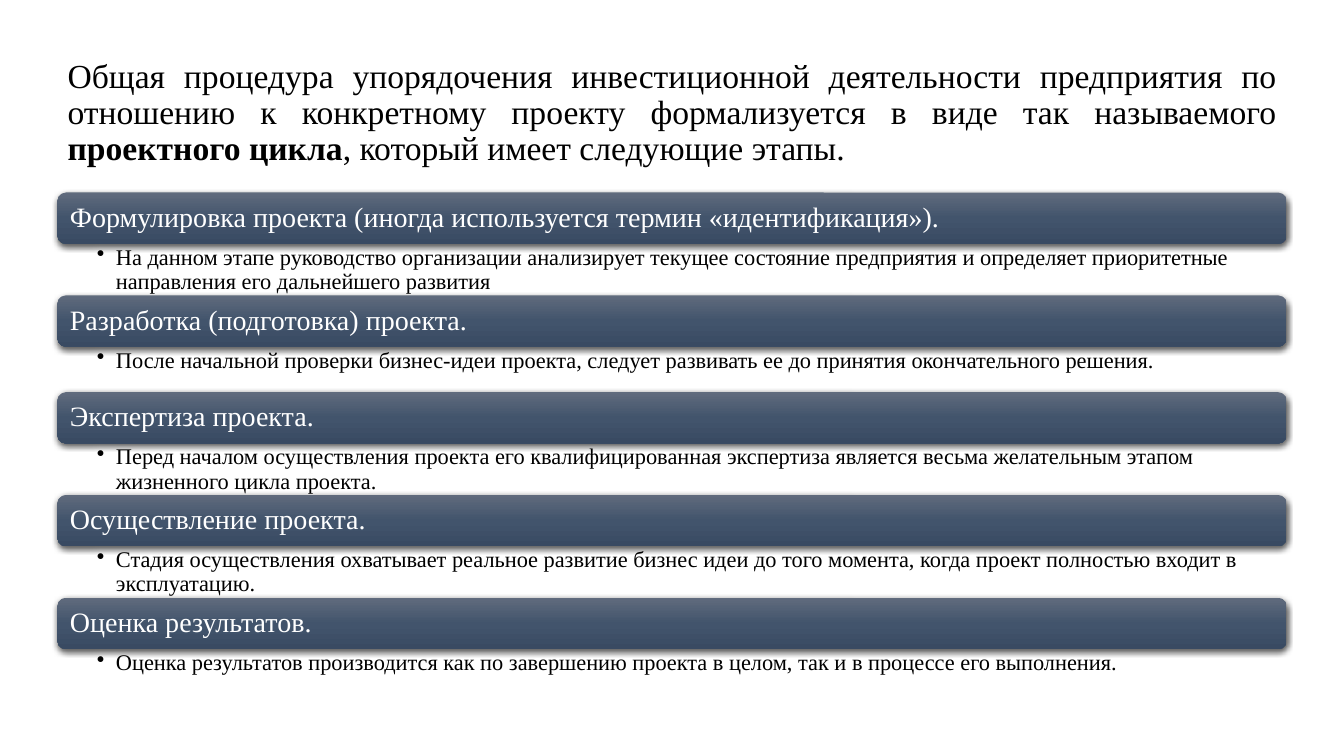
"""Build a slide on the five stages of the project cycle."""
import pptx
import pptx.util
import pptx.oxml
import pptx.oxml.ns
import pptx.dml.color
import pptx.enum.shapes
import pptx.enum.text

Inches = pptx.util.Inches
Pt = pptx.util.Pt
ANCHOR = pptx.enum.text.MSO_ANCHOR
ALIGN = pptx.enum.text.PP_ALIGN
NS = pptx.oxml.ns.nsdecls("a")
COLORS = {"text": "000000", "label": "FFFFFF", "top": "606B7D",
          "mid": "42546C", "base": "394A62", "shade": "000000"}
LEFT, WIDTH, BAR = 0.57, 12.19, 0.51

TITLE = [
    ("Общая процедура упорядочения инвестиционной деятельности предприятия по "
     "отношению к конкретному проекту формализуется в виде так называемого ", False),
    ("проектного цикла", True),
    (", который имеет следующие этапы.", False),
]
STAGES = [
    ("Формулировка проекта (иногда используется термин «идентификация»).",
     "На данном этапе руководство организации анализирует текущее состояние предприятия "
     "и определяет приоритетные направления его дальнейшего развития", 0.51),
    ("Разработка (подготовка) проекта.",
     "После начальной проверки бизнес-идеи проекта, следует развивать ее "
     "до принятия окончательного решения.", 0.45),
    ("Экспертиза проекта.",
     "Перед началом осуществления проекта его квалифицированная экспертиза является "
     "весьма желательным этапом жизненного цикла проекта.", 0.51),
    ("Осуществление проекта.",
     "Стадия осуществления охватывает реальное развитие бизнес идеи до того момента, "
     "когда проект полностью входит в эксплуатацию.", 0.51),
    ("Оценка результатов.",
     "Оценка результатов производится как по завершению проекта в целом, "
     "так и в процессе его выполнения.", 0.45),
]
GRAD = (f'<a:gradFill {NS} rotWithShape="1"><a:gsLst>'
        + "".join(f'<a:gs pos="{pos}"><a:srgbClr val="{COLORS[name]}"/></a:gs>'
                  for pos, name in ((0, "top"), (50000, "mid"), (100000, "base")))
        + '</a:gsLst><a:lin ang="5400000" scaled="0"/></a:gradFill>')
SHADE = (f'<a:outerShdw {NS} blurRad="{Pt(4.5)}" dist="{Pt(1.5)}" dir="5400000" '
         f'algn="ctr" rotWithShape="0"><a:srgbClr val="{COLORS["shade"]}">'
         '<a:alpha val="63000"/></a:srgbClr></a:outerShdw>')


def style(run, size, color):
    run.font.name = "Times New Roman"
    run.font.size = Pt(size)
    run.font.color.rgb = pptx.dml.color.RGBColor.from_string(COLORS[color])


def setup(frame, anchor, left, top, right):
    frame.word_wrap = True
    frame.auto_size = pptx.enum.text.MSO_AUTO_SIZE.NONE
    frame.vertical_anchor = anchor
    frame.margin_left, frame.margin_right = Inches(left), Inches(right)
    frame.margin_top = frame.margin_bottom = Inches(top)
    para = frame.paragraphs[0]
    para.line_spacing = 0.9
    para.alignment = ALIGN.LEFT
    return para


deck = pptx.Presentation()
deck.slide_width, deck.slide_height = Inches(13.33), Inches(7.5)
slide = deck.slides.add_slide(deck.slide_layouts[5])

title = slide.shapes.title
title.left, title.top = Inches(LEFT), Inches(0.4)
title.width, title.height = Inches(WIDTH), Inches(1.45)
para = setup(title.text_frame, ANCHOR.MIDDLE, 0.1, 0.05, 0.1)
para.alignment = ALIGN.JUSTIFY
for text, bold in TITLE:
    run = para.add_run()
    run.text = text
    style(run, 24, "text")
    run.font.bold = bold

top = 1.91
for name, note, height in STAGES:
    bar = slide.shapes.add_shape(
        pptx.enum.shapes.MSO_SHAPE.ROUNDED_RECTANGLE,
        Inches(LEFT), Inches(top), Inches(WIDTH), Inches(BAR))
    bar.line.fill.background()
    bar.shadow.inherit = False
    props = bar.element.spPr
    props.find(pptx.oxml.ns.qn("a:prstGeom")).addnext(pptx.oxml.parse_xml(GRAD))
    props.find(pptx.oxml.ns.qn("a:effectLst")).append(pptx.oxml.parse_xml(SHADE))
    para = setup(bar.text_frame, ANCHOR.MIDDLE, 0.1, 0.08, 0.1)
    para.text = name
    style(para.runs[0], 20, "label")

    box = slide.shapes.add_textbox(
        Inches(LEFT), Inches(top + BAR), Inches(WIDTH), Inches(height))
    para = setup(box.text_frame, ANCHOR.TOP, 0.39, 0.02, 0.12)
    para.text = note
    ppr = para._p.get_or_add_pPr()
    ppr.set("marL", str(Inches(0.19)))
    ppr.set("indent", str(-Inches(0.19)))
    ppr.append(pptx.oxml.parse_xml(f'<a:buChar {NS} char="•"/>'))
    style(para.runs[0], 16, "text")
    top += BAR + height

deck.save("out.pptx")
